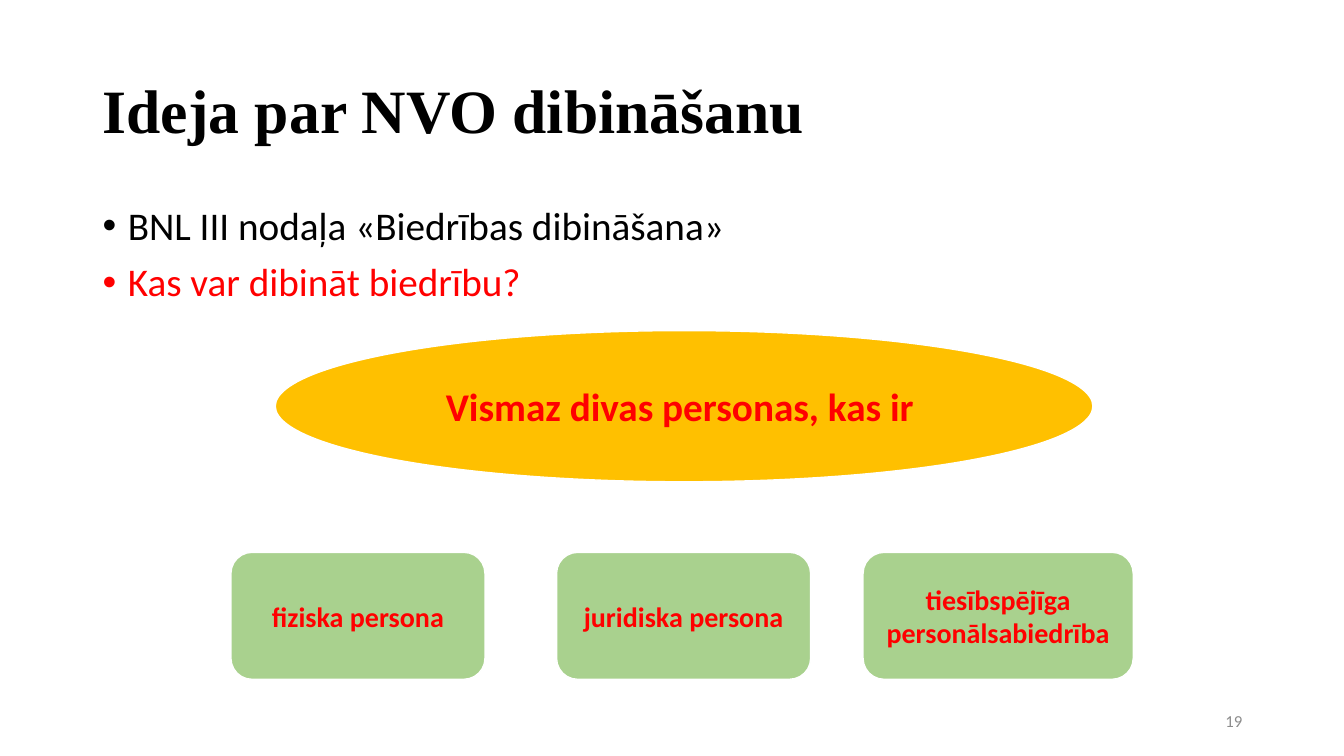
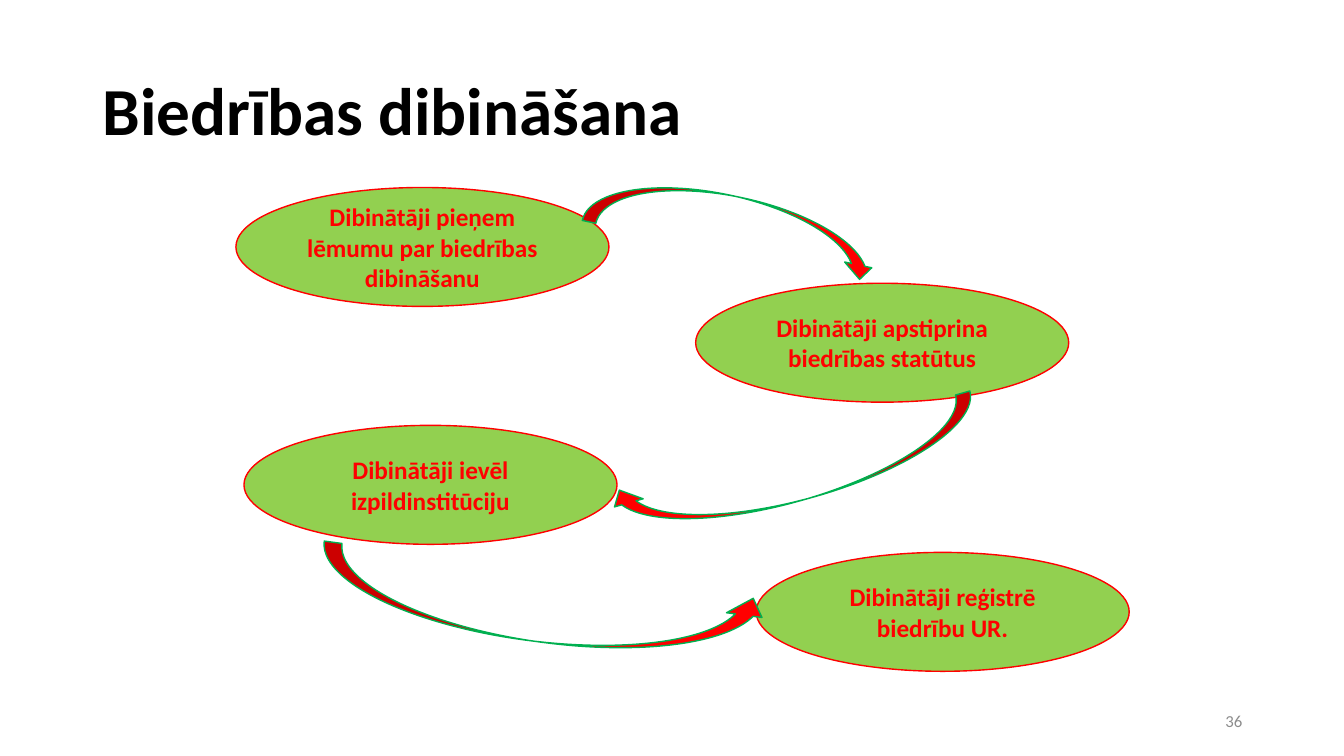
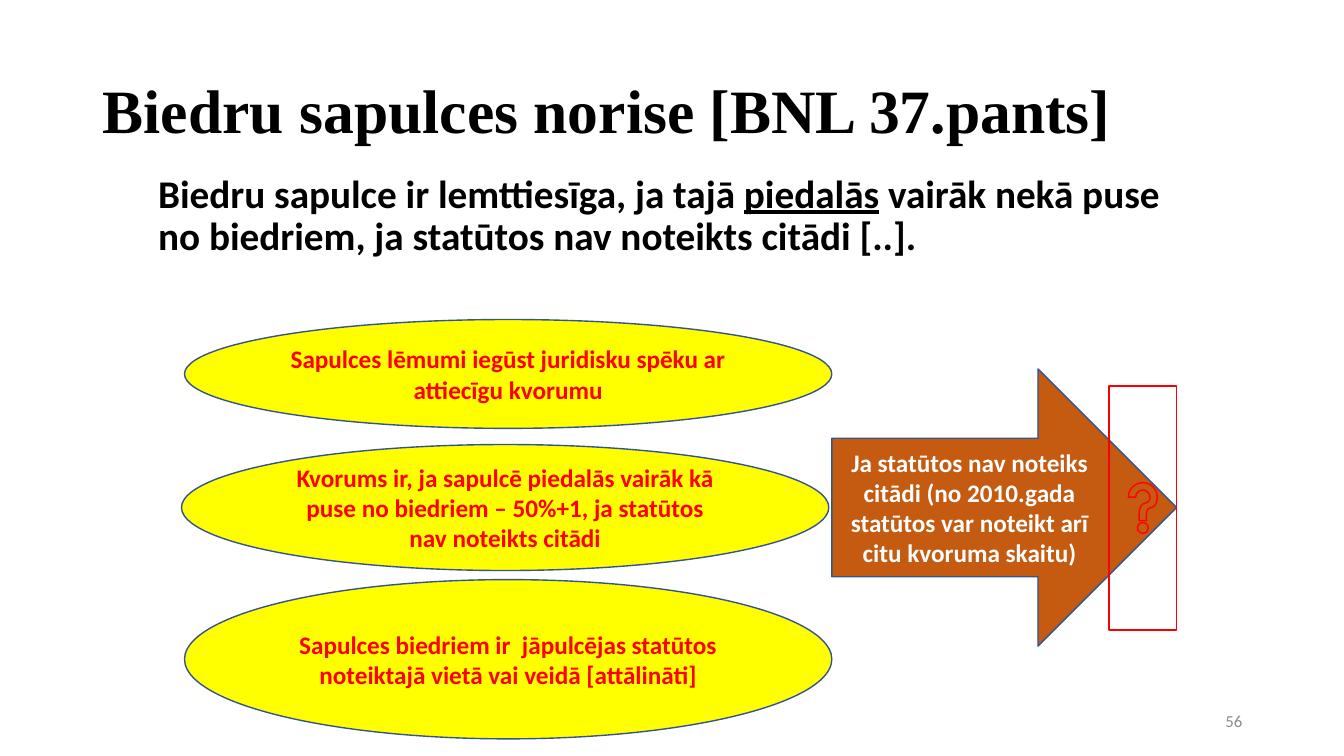
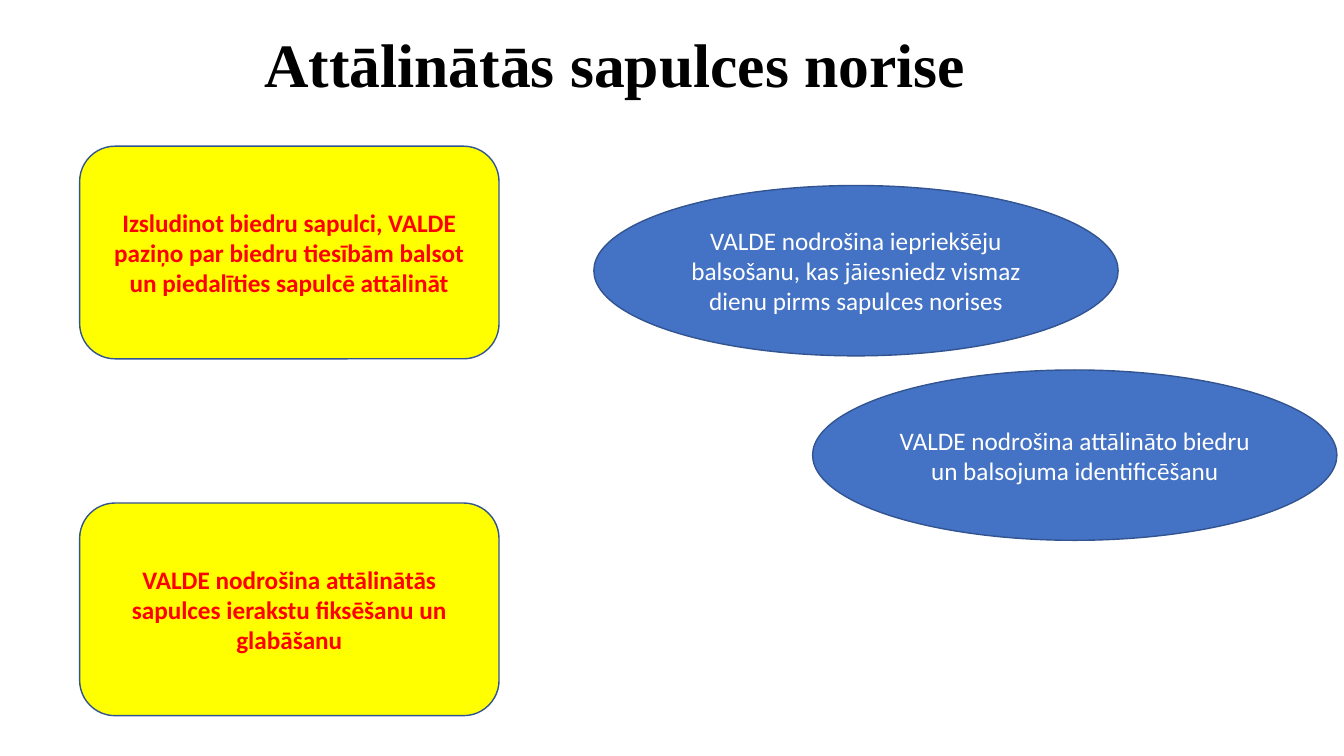
"""Build four slides on founding an association and holding its members' meetings."""
import dataclasses

import pptx
import pptx.dml.color
import pptx.enum.shapes
import pptx.enum.text
import pptx.util
import lxml.etree

Inches = pptx.util.Inches
MSO = pptx.enum.shapes.MSO_SHAPE
ALIGN = pptx.enum.text.PP_ALIGN
ANCHOR = pptx.enum.text.MSO_ANCHOR


@dataclasses.dataclass(frozen=True)
class Theme:
    body_font: str = "Calibri"
    title_font: str = "Times New Roman"
    black: str = "000000"
    white: str = "FFFFFF"
    grey: str = "8C8C8C"
    red: str = "FF0000"
    yellow: str = "FFFF00"
    gold: str = "FFC000"
    sage: str = "A9D18E"
    lime: str = "92D050"
    green: str = "00B050"
    rust: str = "C55A11"
    blue: str = "4472C4"
    navy: str = "325491"
    title: int = 44
    big_title: int = 48
    body: int = 28
    label: int = 20
    small: int = 18
    number: int = 12


T = Theme()


def write(sp, text, size=T.small, color=T.red, bold=True, font=T.body_font,
          align=ALIGN.CENTER, anchor=ANCHOR.MIDDLE, spacing=None, before=0, bullet=None):
    """Add one paragraph to a shape; words between underscores are underlined."""
    tf = sp.text_frame
    tf.word_wrap = True
    tf.vertical_anchor = anchor
    p = tf.add_paragraph() if tf.text else tf.paragraphs[0]
    p.alignment = align
    p.line_spacing = spacing
    p.space_before = pptx.util.Pt(before)
    if bullet:
        pPr = p._p.get_or_add_pPr()
        pPr.set("marL", str(Inches(0.25)))
        pPr.set("indent", str(Inches(-0.25)))
        ns = pptx.oxml.ns.qn
        lxml.etree.SubElement(pPr, ns("a:buFont")).set("typeface", "Arial")
        lxml.etree.SubElement(pPr, ns("a:buChar")).set("char", bullet)
    for i, part in enumerate(text.split("_")):
        r = p.add_run()
        r.text = part
        r.font.size = pptx.util.Pt(size)
        r.font.name = font
        r.font.bold = bold
        r.font.underline = i % 2 == 1
        r.font.color.rgb = pptx.dml.color.RGBColor.from_string(color)


def draw(s, kind, at, fill=None, line=T.navy):
    """Add a preset shape at (left, top, width, height) in inches."""
    sp = s.shapes.add_shape(kind, *map(Inches, at))
    sp.shadow.inherit = False
    if fill:
        sp.fill.solid()
        sp.fill.fore_color.rgb = pptx.dml.color.RGBColor.from_string(fill)
    else:
        sp.fill.background()
    sp.line.color.rgb = pptx.dml.color.RGBColor.from_string(line)
    sp.line.width = pptx.util.Pt(1)
    return sp


prs = pptx.Presentation()
prs.slide_width, prs.slide_height = Inches(13.33), Inches(7.5)

title_at = (0.92, 0.4, 11.5, 1.45)
slides = []
for title, font, size, at, number in [
    ("Ideja par NVO dibināšanu", T.title_font, T.title, title_at, "19"),
    ("Biedrības dibināšana", T.body_font, T.big_title, title_at, "36"),
    ("Biedru sapulces norise [BNL 37.pants]", T.title_font, T.title, title_at, "56"),
    ("Attālinātās sapulces norise", T.title_font, T.title, (2.52, 0.21, 8.75, 0.92), None),
]:
    s = prs.slides.add_slide(prs.slide_layouts[6])
    slides.append(s)
    write(s.shapes.add_textbox(*map(Inches, at)), title, size=size, color=T.black,
          font=font, align=ALIGN.LEFT, spacing=0.9)
    if number:
        sp = s.shapes.add_textbox(Inches(9.42), Inches(6.95), Inches(3), Inches(0.4))
        write(sp, number, size=T.number, color=T.grey, bold=False, align=ALIGN.RIGHT)
idea, founding, meeting, remote = slides

body_style = dict(size=T.body, align=ALIGN.LEFT, anchor=ANCHOR.TOP, spacing=0.9, before=10)

sp = idea.shapes.add_textbox(Inches(0.92), Inches(2), Inches(11.5), Inches(4.76))
for text, color in [("BNL III nodaļa «Biedrības dibināšana»", T.black),
                    ("Kas var dibināt biedrību?", T.red)]:
    write(sp, text, color=color, bold=False, bullet="•", **body_style)
sp = draw(idea, MSO.OVAL, (2.73, 3.28, 8.11, 1.5), T.gold, T.white)
write(sp, "Vismaz divas personas, kas ir ", size=T.body)
for text, left, width in [("fiziska persona", 2.29, 2.52),
                          ("juridiska persona", 5.52, 2.52),
                          ("tiesībspējīga personālsabiedrība", 8.56, 2.68)]:
    sp = draw(idea, MSO.ROUNDED_RECTANGLE, (left, 5.48, width, 1.26), T.sage, T.white)
    write(sp, text, size=T.label)

for text, left, top in [
    ("Dibinātāji pieņem lēmumu par biedrības dibināšanu", 2.34, 1.86),
    ("Dibinātāji apstiprina biedrības statūtus", 6.9, 2.81),
    ("Dibinātāji ievēl izpildinstitūciju", 2.42, 4.22),
    ("Dibinātāji reģistrē biedrību UR.", 7.5, 5.48),
]:
    write(draw(founding, MSO.OVAL, (left, top, 3.7, 1.18), T.lime, T.red), text)
for kind, at, rotation, flipped in [
    (MSO.CURVED_DOWN_ARROW, (5.8, 1.95, 2.95, 0.55), 12, False),
    (MSO.CURVED_UP_ARROW, (6.01, 4.38, 3.76, 0.59), 344.2, True),
    (MSO.CURVED_UP_ARROW, (3.15, 5.66, 4.47, 0.71), 7.6, False),
]:
    sp = draw(founding, kind, at, T.red, T.green)
    sp.rotation = rotation
    if flipped:
        sp._element.spPr.xfrm.set("flipH", "1")

sp = meeting.shapes.add_textbox(Inches(1.47), Inches(1.68), Inches(10.19), Inches(1.23))
write(sp, "Biedru sapulce ir lemttiesīga, ja tajā _piedalās_ vairāk nekā puse no biedriem, "
      "ja statūtos nav noteikts citādi [..].", color=T.black, **body_style)
for text, left, top, height in [
    ("Sapulces lēmumi iegūst juridisku spēku ar attiecīgu kvorumu", 1.83, 3.17, 1.08),
    ("Kvorums ir, ja sapulcē piedalās vairāk kā puse no biedriem – 50%+1, "
     "ja statūtos nav noteikts citādi", 1.8, 4.41, 1.25),
    ("Sapulces biedriem ir  jāpulcējas statūtos noteiktajā vietā vai veidā [attālināti]",
     1.83, 5.75, 1.58),
]:
    write(draw(meeting, MSO.OVAL, (left, top, 6.42, height), T.yellow), text)
sp = draw(meeting, MSO.RIGHT_ARROW, (8.25, 3.66, 3.42, 2.75), T.rust)
write(sp, "Ja statūtos nav noteiks citādi (no 2010.gada statūtos var noteikt arī "
      "citu kvoruma skaitu)", color=T.white)
draw(meeting, MSO.ACTION_BUTTON_HELP, (11, 3.83, 0.67, 2.42), line=T.red)

for text, top in [
    ("Izsludinot biedru sapulci, VALDE paziņo par biedru tiesībām balsot un "
     "piedalīties sapulcē attālināt", 1.45),
    ("VALDE nodrošina attālinātās sapulces ierakstu fiksēšanu un glabāšanu", 4.99),
]:
    write(draw(remote, MSO.ROUNDED_RECTANGLE, (0.79, top, 4.16, 2.11), T.yellow), text)
for text, left, top in [
    ("VALDE nodrošina iepriekšēju balsošanu, kas jāiesniedz vismaz dienu pirms "
     "sapulces norises", 5.89, 1.84),
    ("VALDE nodrošina attālināto biedru un balsojuma identificēšanu", 8.06, 3.67),
]:
    sp = draw(remote, MSO.OVAL, (left, top, 5.2, 1.69), T.blue)
    write(sp, text, color=T.white, bold=False)

prs.save("out.pptx")
